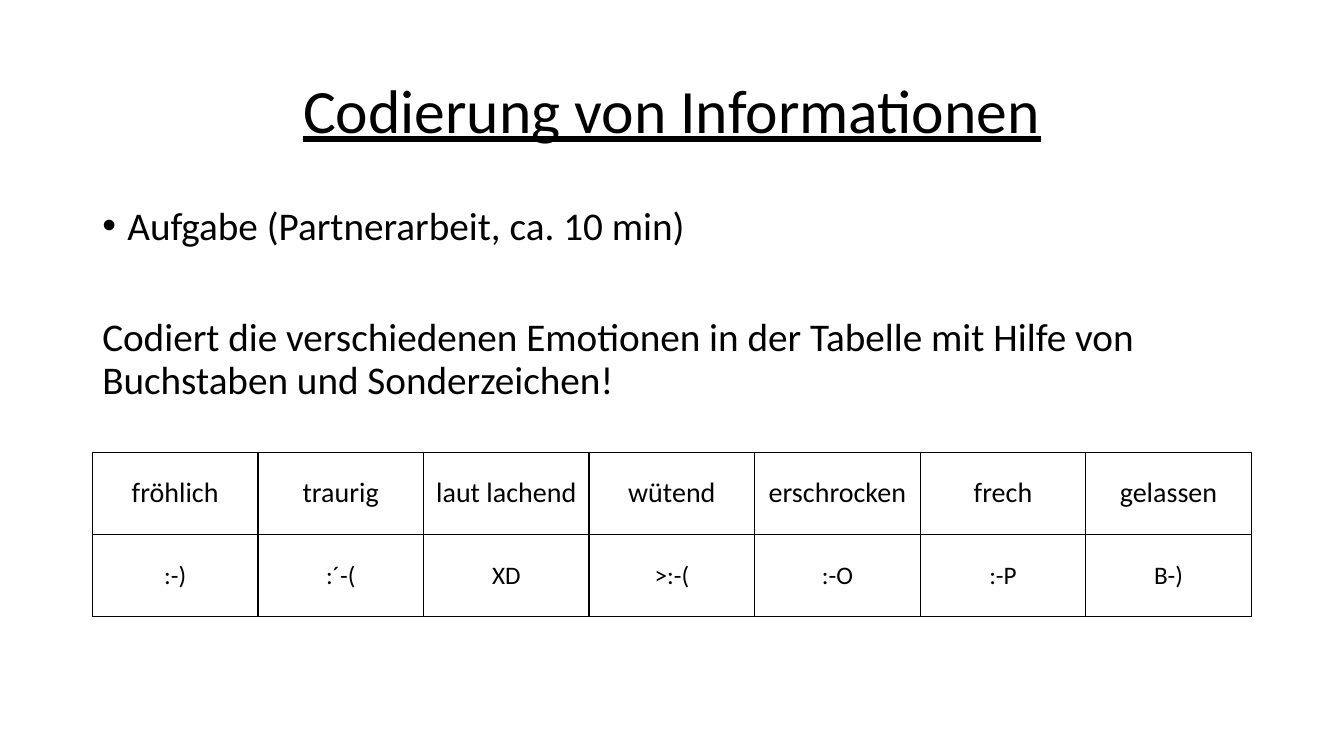
from lxml import etree
from pptx import Presentation
from pptx.dml.color import RGBColor
from pptx.enum.text import MSO_ANCHOR, PP_ALIGN
from pptx.oxml.ns import qn
from pptx.util import Pt

LEFT, CENTER = PP_ALIGN.LEFT, PP_ALIGN.CENTER
TOP, MIDDLE = MSO_ANCHOR.TOP, MSO_ANCHOR.MIDDLE
TITLE_ONLY = 5

COLORS = {"ink": "000000", "paper": "FFFFFF"}
MARGIN, CONTENT_WIDTH = 66, 828

EMOTIONS = {
    "fröhlich": ":-)",
    "traurig": ":´-(",
    "laut lachend": "XD",
    "wütend": ">:-(",
    "erschrocken": ":-O",
    "frech": ":-P",
    "gelassen": "B-)",
}


class SlideBuilder:
    font = "Calibri"

    def __init__(self, deck):
        self.page = deck.slides.add_slide(deck.slide_layouts[TITLE_ONLY])

    def add_span(self, para, text, size, align=LEFT, underline=False):
        para.alignment = align
        span = para.add_run()
        span.text = text
        span.font.name = self.font
        span.font.size = Pt(size)
        span.font.underline = underline
        span.font.color.rgb = RGBColor.from_string(COLORS["ink"])

    def title(self, text, left, top, width, height):
        box = self.page.shapes.title
        box.left, box.top = Pt(left), Pt(top)
        box.width, box.height = Pt(width), Pt(height)
        box.text_frame.vertical_anchor = MIDDLE
        para = box.text_frame.paragraphs[0]
        para.line_spacing = 0.9
        self.add_span(para, text, 44, CENTER, underline=True)

    def body(self, items, left, top, width, height):
        """Put items of (text, space before, bulleted) into one text box."""
        box = self.page.shapes.add_textbox(Pt(left), Pt(top), Pt(width), Pt(height))
        frame = box.text_frame
        frame.word_wrap = True
        frame.vertical_anchor = TOP
        for index, (text, space, bulleted) in enumerate(items):
            para = frame.add_paragraph() if index else frame.paragraphs[0]
            para.line_spacing = 0.9
            para.space_before = Pt(space)
            self.add_span(para, text, 28)
            if bulleted:
                self.bullet(para)

    def bullet(self, para):
        props = para._p.get_or_add_pPr()
        props.set("marL", str(Pt(18)))
        props.set("indent", str(Pt(-18)))
        etree.SubElement(props, qn("a:buFont")).set("typeface", "Arial")
        etree.SubElement(props, qn("a:buChar")).set("char", "•")

    def table(self, rows, sizes, left, top, width, height):
        """Draw a ruled table; sizes holds the text size of each row."""
        frame = self.page.shapes.add_table(
            len(rows), len(rows[0]), Pt(left), Pt(top), Pt(width), Pt(height))
        grid = frame.table
        grid.first_row = grid.horz_banding = False
        for row, (texts, size) in enumerate(zip(rows, sizes)):
            for column, text in enumerate(texts):
                cell = grid.cell(row, column)
                cell.vertical_anchor = MIDDLE
                self.add_span(cell.text_frame.paragraphs[0], text, size, CENTER)
                self.borders(cell)
                cell.fill.solid()
                cell.fill.fore_color.rgb = RGBColor.from_string(COLORS["paper"])

    def borders(self, cell):
        props = cell._tc.get_or_add_tcPr()
        for side in ("lnL", "lnR", "lnT", "lnB"):
            line = etree.SubElement(props, qn(f"a:{side}"), w=str(Pt(1)))
            fill = etree.SubElement(line, qn("a:solidFill"))
            etree.SubElement(fill, qn("a:srgbClr")).set("val", COLORS["ink"])


def main():
    deck = Presentation()
    deck.slide_width, deck.slide_height = Pt(960), Pt(540)
    slide = SlideBuilder(deck)
    slide.title("Codierung von Informationen", MARGIN, 28.75, CONTENT_WIDTH, 104.4)
    slide.body([
        ("Aufgabe (Partnerarbeit, ca. 10 min)", 10, True),
        ("Codiert die verschiedenen Emotionen in der Tabelle mit Hilfe von "
         "Buchstaben und Sonderzeichen!", 49.5, False),
    ], MARGIN, 143.75, CONTENT_WIDTH, 342.6)
    slide.table([list(EMOTIONS), list(EMOTIONS.values())], (20, 18),
                MARGIN, 323, CONTENT_WIDTH, 117.4)
    deck.save("out.pptx")


if __name__ == "__main__":
    main()
